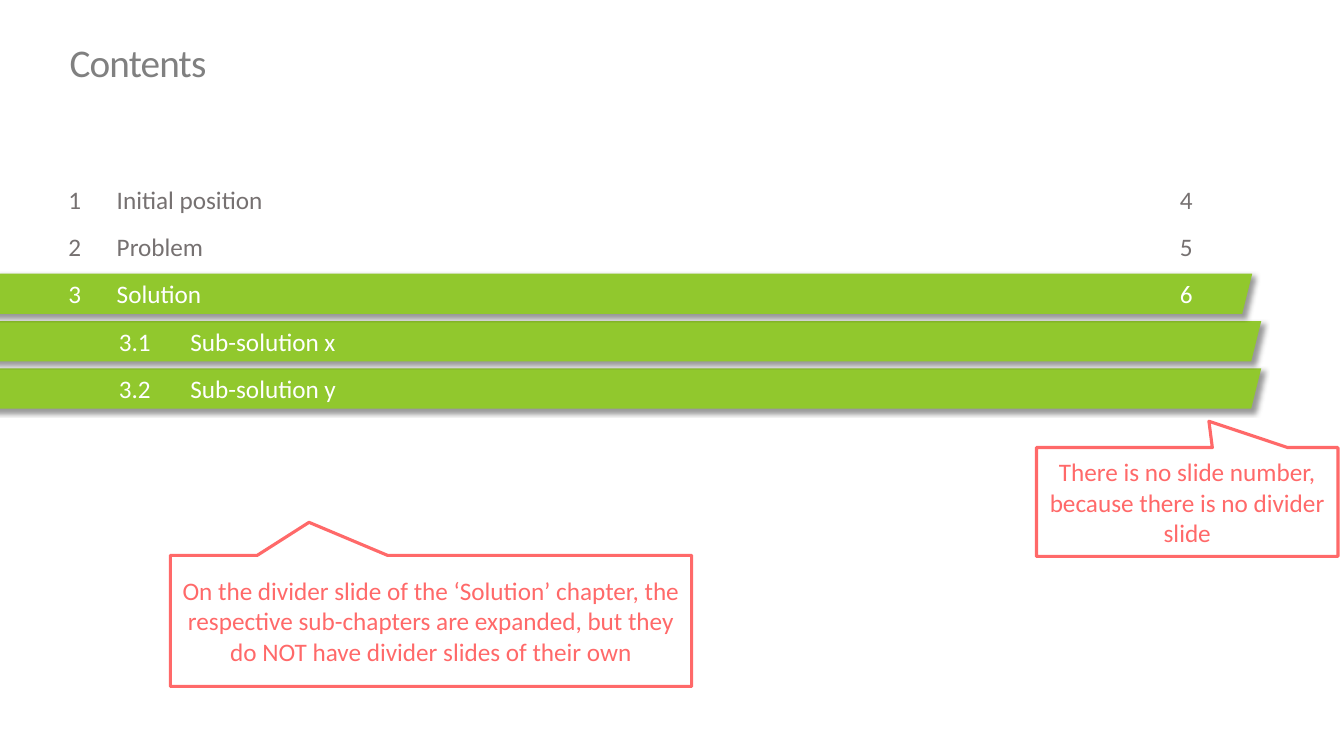
from lxml.etree import SubElement
from pptx import Presentation
from pptx.dml.color import RGBColor
from pptx.enum.shapes import MSO_SHAPE
from pptx.enum.text import MSO_ANCHOR, PP_ALIGN
from pptx.oxml.ns import qn
from pptx.util import Inches, Pt

TITLE = "Contents"
ROWS = [
    ("1", "Initial position", "4", False),
    ("2", "Problem", "5", False),
    ("3", "Solution", "6", True),
    ("3.1", "Sub-solution x", "", True),
    ("3.2", "Sub-solution y", "", True),
]
NOTES = [
    ("On the divider slide of the ‘Solution’ chapter, the respective "
     "sub-chapters are expanded, but they do NOT have divider slides of their own",
     (1.69, 5.51, 5.17, 1.3), (-0.234, -0.752)),
    ("There is no slide number, because there is no divider slide",
     (10.28, 4.44, 2.99, 1.08), (0.072, -0.742)),
]
FONT = "Calibri"
GREEN, GREY, RED, WHITE = "91C82D", "767171", "FF6969", "FFFFFF"
TOP, PITCH = 1.74, 0.47
BAR_LEFT, BAR_HIGH = -0.15, 0.4
MAIN = {"num": (0.58, 0.43), "name": (1.06, 6.24), "bar": 12.57}
SUB = {"num": (1.08, 0.61), "name": (1.79, 5.52), "bar": 12.66}
PAGE = (11.42, 0.69)


def color(code):
    return RGBColor.from_string(code)


def write(shape, text, code, align=PP_ALIGN.LEFT, size=18):
    frame = shape.text_frame
    frame.word_wrap = True
    frame.vertical_anchor = MSO_ANCHOR.MIDDLE
    frame.text = text
    par = frame.paragraphs[0]
    par.alignment = align
    par.font.name = FONT
    par.font.size = Pt(size)
    par.font.color.rgb = color(code)
    return par


def add_label(slide, text, span, top, code, align=PP_ALIGN.LEFT):
    left, width = span
    box = slide.shapes.add_textbox(
        Inches(left), Inches(top), Inches(width), Inches(PITCH))
    write(box, text, code, align)


def add_bar(slide, top, width):
    bar = slide.shapes.add_shape(
        MSO_SHAPE.PARALLELOGRAM, Inches(BAR_LEFT), Inches(top),
        Inches(width), Inches(BAR_HIGH))
    bar.fill.solid()
    bar.fill.fore_color.rgb = color(GREEN)
    bar.line.fill.background()
    bar.shadow.inherit = False
    effects = bar.element.spPr.find(qn("a:effectLst"))
    shade = SubElement(
        effects, qn("a:outerShdw"), blurRad=str(Pt(4)), dist=str(Pt(3)),
        dir=str(45 * 60000), algn="tl", rotWithShape="0")
    tint = SubElement(shade, qn("a:srgbClr"), val="000000")
    SubElement(tint, qn("a:alpha"), val="40000")


def add_row(slide, index, row):
    number, name, page, active = row
    place = SUB if "." in number else MAIN
    top = TOP + index * PITCH
    code = WHITE if active else GREY
    if active:
        add_bar(slide, top + (PITCH - BAR_HIGH) / 2, place["bar"])
    add_label(slide, number, place["num"], top, code)
    add_label(slide, name, place["name"], top, code)
    if page:
        add_label(slide, page, PAGE, top, code, PP_ALIGN.CENTER)


def add_note(slide, text, box, tip):
    note = slide.shapes.add_shape(
        MSO_SHAPE.RECTANGULAR_CALLOUT, *[Inches(v) for v in box])
    note.adjustments[0], note.adjustments[1] = tip
    note.fill.background()
    note.line.color.rgb = color(RED)
    note.line.width = Pt(2.25)
    note.shadow.inherit = False
    write(note, text, RED, PP_ALIGN.CENTER)


def add_title(slide):
    title = slide.shapes.title
    title.left, title.top = Inches(0.59), Inches(0.18)
    title.width, title.height = Inches(11.64), Inches(0.93)
    par = write(title, TITLE, "808080", size=28)
    par.line_spacing = 0.9
    par.runs[0].font._element.set("spc", "-60")


def main():
    deck = Presentation()
    deck.slide_width, deck.slide_height = Inches(13.33), Inches(7.5)
    slide = deck.slides.add_slide(deck.slide_layouts[5])
    add_title(slide)
    for index, row in reversed(list(enumerate(ROWS))):
        add_row(slide, index, row)
    for note in NOTES:
        add_note(slide, *note)
    deck.save("out.pptx")


if __name__ == "__main__":
    main()
